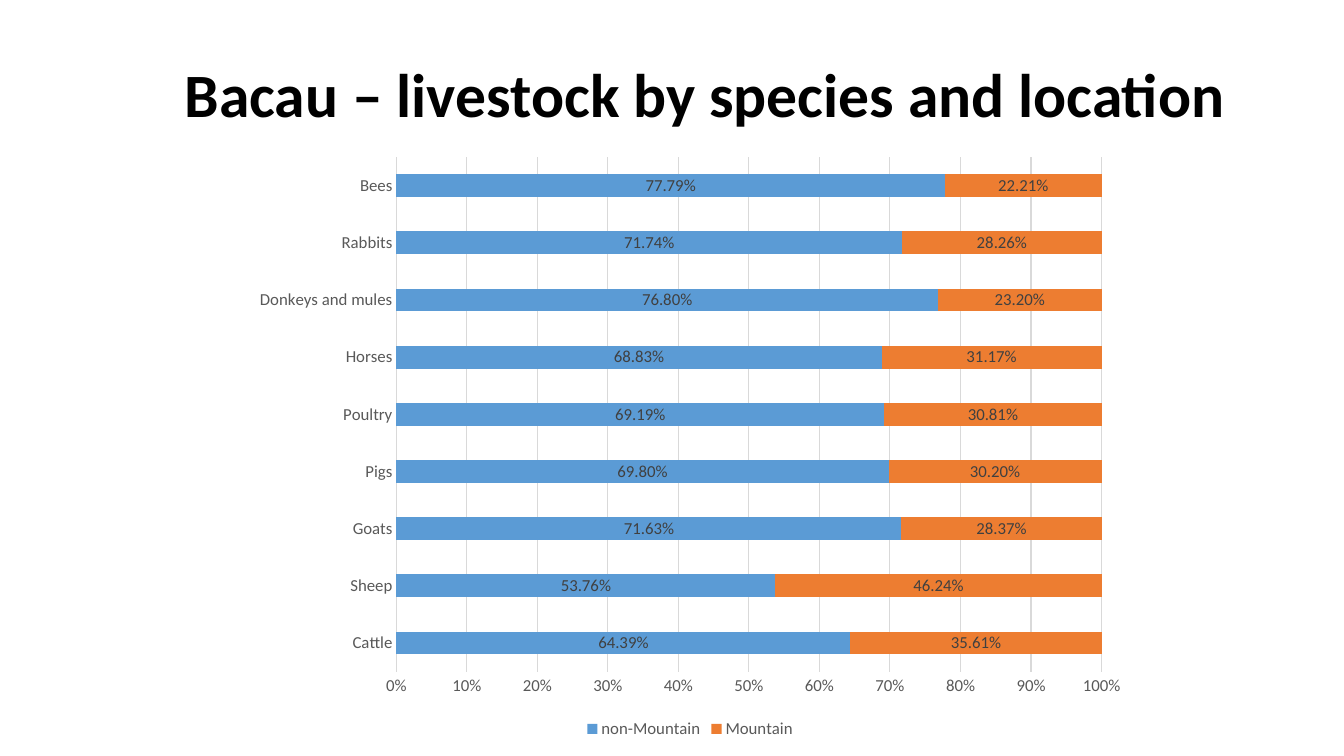
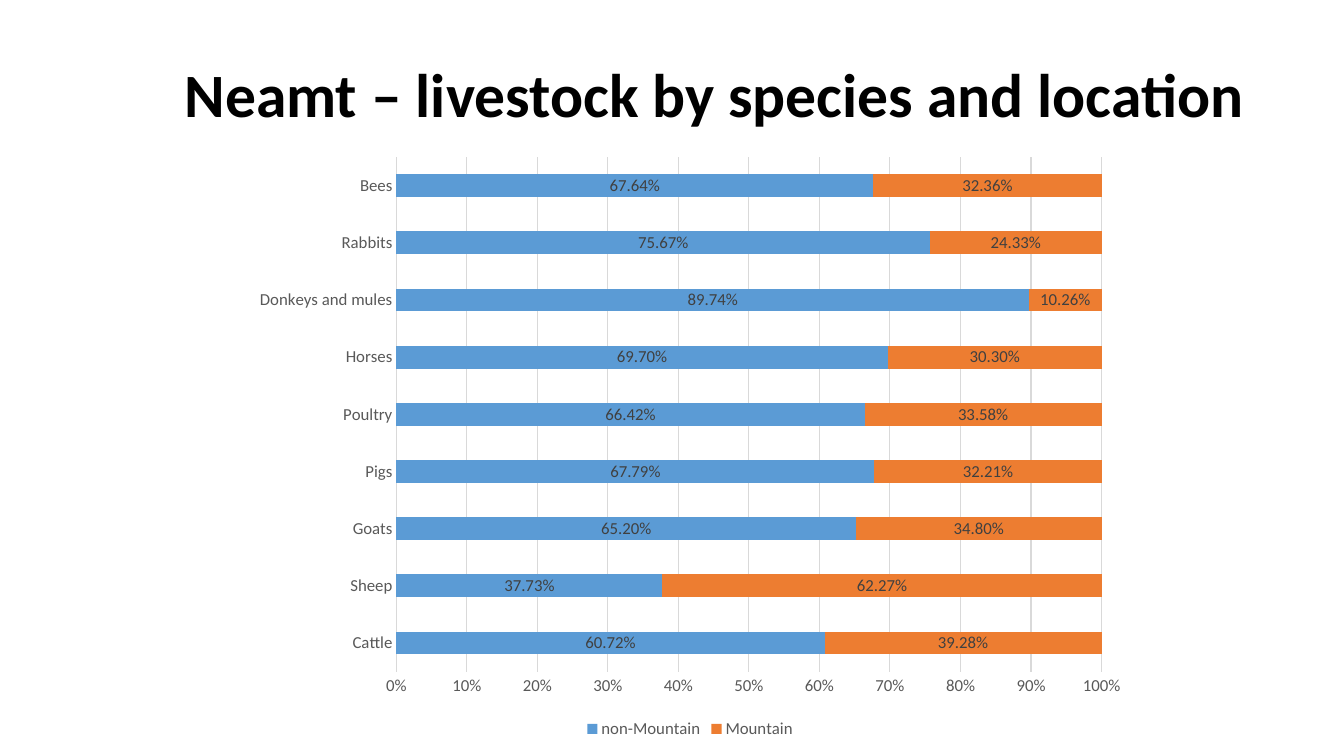
from dataclasses import dataclass

from pptx import Presentation
from pptx.chart.data import CategoryChartData
from pptx.dml.color import RGBColor
from pptx.enum.chart import XL_CHART_TYPE, XL_LEGEND_POSITION, XL_TICK_MARK
from pptx.enum.text import MSO_ANCHOR, MSO_AUTO_SIZE, PP_ALIGN
from pptx.util import Inches, Pt


@dataclass(frozen=True)
class Theme:
    """Colours and type sizes shared by all slides."""

    font: str = "Calibri"
    title_color: str = "000000"
    axis_color: str = "595959"
    label_color: str = "404040"
    grid_color: str = "D9D9D9"
    series_colors: tuple = ("5B9BD5", "ED7D31")
    title_size: float = 44
    chart_size: float = 12
    line_width: float = 0.75


THEME = Theme()
TITLE_BOX = (1.73, 0.27, 11.36, 1.4)
CHART_BOX = (2.4, 1.44, 8.89, 5.93)
SPECIES = ("Cattle", "Sheep", "Goats", "Pigs", "Poultry", "Horses",
           "Donkeys and mules", "Rabbits", "Bees")
NON_MOUNTAIN_SHARES = {
    "Bacau": (0.6439, 0.5376, 0.7163, 0.698, 0.6919, 0.6883, 0.768, 0.7174, 0.7779),
    "Neamt": (0.6072, 0.3773, 0.652, 0.6779, 0.6642, 0.697, 0.8974, 0.7567, 0.6764),
}


def style_font(font, size, color, bold=False):
    """Apply the theme typeface with a size, colour and weight."""
    font.name = THEME.font
    font.size = Pt(size)
    font.bold = bold
    font.color.rgb = RGBColor.from_string(color)


def style_line(line):
    """Draw a thin grid-coloured line."""
    line.width = Pt(THEME.line_width)
    line.color.rgb = RGBColor.from_string(THEME.grid_color)


def place_title(slide, box, text):
    """Fill and position the title placeholder."""
    title = slide.shapes.title
    title.left, title.top, title.width, title.height = map(Inches, box)
    frame = title.text_frame
    frame.word_wrap = True
    frame.auto_size = MSO_AUTO_SIZE.NONE
    frame.vertical_anchor = MSO_ANCHOR.MIDDLE
    paragraph = frame.paragraphs[0]
    paragraph.alignment = PP_ALIGN.LEFT
    paragraph.line_spacing = 0.9
    run = paragraph.add_run()
    run.text = text
    style_font(run.font, THEME.title_size, THEME.title_color, bold=True)


def style_axes(chart):
    """Format the species axis and the percentage axis."""
    for axis in (chart.category_axis, chart.value_axis):
        axis.major_tick_mark = XL_TICK_MARK.NONE
        axis.minor_tick_mark = XL_TICK_MARK.NONE
        style_font(axis.tick_labels.font, THEME.chart_size, THEME.axis_color)
    style_line(chart.category_axis.format.line)
    value_axis = chart.value_axis
    value_axis.format.line.fill.background()
    value_axis.has_major_gridlines = True
    style_line(value_axis.major_gridlines.format.line)
    value_axis.tick_labels.number_format = "0%"
    value_axis.tick_labels.number_format_is_linked = False


def style_series(series, color):
    """Colour one series and show its values."""
    series.format.fill.solid()
    series.format.fill.fore_color.rgb = RGBColor.from_string(color)
    series.invert_if_negative = False
    labels = series.data_labels
    labels.show_value = True
    labels.number_format = "0.00%"
    labels.number_format_is_linked = False
    style_font(labels.font, THEME.chart_size, THEME.label_color)


def place_chart(slide, box, non_mountain):
    """Add the stacked bars of non-mountain and mountain shares."""
    data = CategoryChartData(number_format="0.00%")
    data.categories = SPECIES
    data.add_series("non-Mountain", non_mountain)
    data.add_series("Mountain", [round(1 - share, 4) for share in non_mountain])
    chart = slide.shapes.add_chart(
        XL_CHART_TYPE.BAR_STACKED_100, *map(Inches, box), data).chart
    style_font(chart.font, THEME.chart_size, THEME.axis_color)
    chart.has_title = False
    chart.has_legend = True
    chart.legend.position = XL_LEGEND_POSITION.BOTTOM
    chart.legend.include_in_layout = False
    style_font(chart.legend.font, THEME.chart_size, THEME.axis_color)
    style_axes(chart)
    plot = chart.plots[0]
    plot.gap_width = 150
    plot.overlap = 100
    plot.vary_by_categories = False
    for series, color in zip(plot.series, THEME.series_colors):
        style_series(series, color)


def add_livestock_slide(presentation, county, non_mountain):
    """Add one county slide with its title and chart."""
    slide = presentation.slides.add_slide(presentation.slide_layouts[5])
    place_title(slide, TITLE_BOX, f"{county} – livestock by species and location")
    place_chart(slide, CHART_BOX, non_mountain)


def main():
    """Build and save the presentation."""
    presentation = Presentation()
    presentation.slide_width = Inches(13.33)
    presentation.slide_height = Inches(7.5)
    for county, non_mountain in NON_MOUNTAIN_SHARES.items():
        add_livestock_slide(presentation, county, non_mountain)
    presentation.save("out.pptx")


if __name__ == "__main__":
    main()
